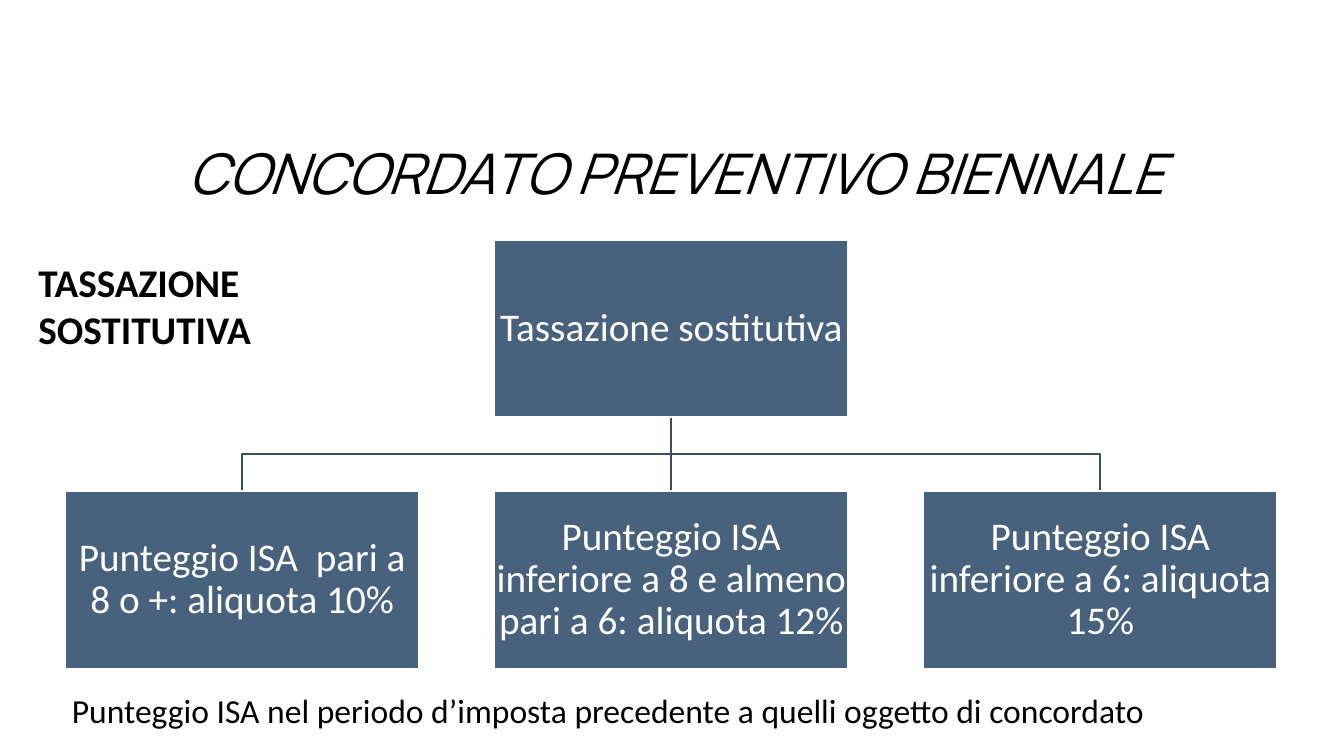
"""Build the slide on the two-year agreement: a substitute tax tree with three rates."""
from lxml.etree import SubElement
from pptx import Presentation
from pptx.dml.color import RGBColor
from pptx.enum.shapes import MSO_CONNECTOR, MSO_SHAPE
from pptx.enum.text import MSO_ANCHOR, PP_ALIGN
from pptx.oxml.ns import qn
from pptx.util import Inches, Pt

TITLE = "CONCORDATO PREVENTIVO BIENNALE"
HEADING = "TASSAZIONE SOSTITUTIVA"
ROOT = "Tassazione sostitutiva"
RATES = [
    "Punteggio ISA  pari a 8 o +: aliquota 10%",
    "Punteggio ISA inferiore a 8 e almeno pari a 6: aliquota 12%",
    "Punteggio ISA inferiore a 6: aliquota 15%",
]
FOOTNOTE = "Punteggio ISA nel periodo d’imposta precedente a quelli oggetto di concordato"

COLORS = {"ink": "000000", "paper": "FFFFFF", "node": "48617D", "branch": "3A4E64"}
SLIDE_W, SLIDE_H = 20, 11.25
NODE_W, NODE_H = 5.27, 2.64
TREE_LEFT, COLUMN_STEP = 0.97, 6.385
ROOT_TOP, RATE_TOP = 3.57, 7.31
LINE_WIDTH = Pt(2)


def color(key):
    return RGBColor.from_string(COLORS[key])


def write(box, text, size=42, font="Calibri", ink="ink", bold=False, italic=False,
          align=PP_ALIGN.LEFT, spacing=None, anchor=MSO_ANCHOR.TOP,
          inset=(0.1, 0.05), wrap=True):
    frame = box.text_frame
    frame.word_wrap = wrap
    frame.vertical_anchor = anchor
    frame.margin_left = frame.margin_right = Inches(inset[0])
    frame.margin_top = frame.margin_bottom = Inches(inset[1])
    paragraph = frame.paragraphs[0]
    paragraph.alignment = align
    paragraph.line_spacing = spacing
    run = paragraph.add_run()
    run.text = text
    run.font.size, run.font.name = Pt(size), font
    run.font.bold, run.font.italic = bold, italic
    run.font.color.rgb = color(ink)


def add_text(slide, text, left, top, width, height, **style):
    box = slide.shapes.add_textbox(*map(Inches, (left, top, width, height)))
    write(box, text, **style)


def add_node(slide, text, column, top):
    left = TREE_LEFT + column * COLUMN_STEP
    node = slide.shapes.add_shape(
        MSO_SHAPE.RECTANGLE, *map(Inches, (left, top, NODE_W, NODE_H)))
    node.shadow.inherit = False
    node.fill.solid()
    node.fill.fore_color.rgb = color("node")
    node.line.color.rgb = color("paper")
    node.line.width = LINE_WIDTH
    write(node, text, ink="paper", align=PP_ALIGN.CENTER, spacing=0.9,
          anchor=MSO_ANCHOR.MIDDLE, inset=(0.03, 0.03))


def add_branch(slide, column, root_column):
    start_x, end_x = (TREE_LEFT + c * COLUMN_STEP + NODE_W / 2
                      for c in (root_column, column))
    start_y, end_y = ROOT_TOP + NODE_H, RATE_TOP
    middle_y = (start_y + end_y) / 2
    if column == root_column:
        branch = slide.shapes.add_connector(
            MSO_CONNECTOR.STRAIGHT, *map(Inches, (start_x, start_y, end_x, end_y)))
        SubElement(branch._element.spPr, qn("a:effectLst"))
    else:
        builder = slide.shapes.build_freeform(
            Inches(start_x), Inches(start_y), scale=1.0)
        corners = [(start_x, middle_y), (end_x, middle_y), (end_x, end_y)]
        builder.add_line_segments(
            [(Inches(x), Inches(y)) for x, y in corners], close=False)
        branch = builder.convert_to_shape()
        branch.shadow.inherit = False
        branch.fill.background()
    branch.line.color.rgb = color("branch")
    branch.line.width = LINE_WIDTH


def main():
    deck = Presentation()
    deck.slide_width, deck.slide_height = Inches(SLIDE_W), Inches(SLIDE_H)
    slide = deck.slides.add_slide(deck.slide_layouts[6])

    add_text(slide, HEADING, 0.42, 3.77, 6.58, 0.86, bold=True, inset=(0.15, 0.07))
    root_column = len(RATES) // 2
    for column in range(len(RATES)):
        add_branch(slide, column, root_column)
    add_node(slide, ROOT, root_column, ROOT_TOP)
    for column, rate in enumerate(RATES):
        add_node(slide, rate, column, RATE_TOP)
    add_text(slide, TITLE, 1.5, 1.76, 17.12, 1.28, size=60, font="Manrope",
             italic=True, align=PP_ALIGN.CENTER, spacing=1.25)
    add_text(slide, FOOTNOTE, TREE_LEFT, 10.21, 16.31, 0.71, size=36, wrap=False)
    deck.save("out.pptx")


if __name__ == "__main__":
    main()
